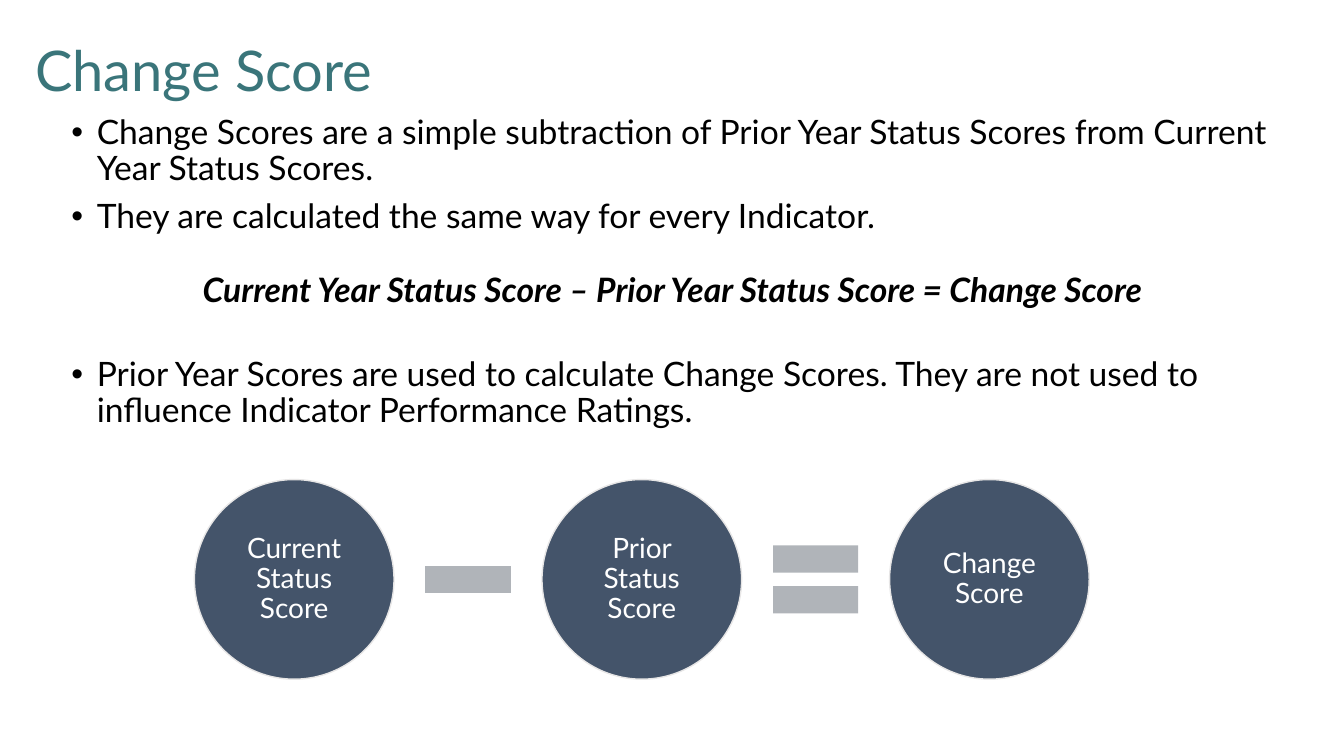
from dataclasses import dataclass

from lxml import etree
from pptx import Presentation
from pptx.dml.color import RGBColor
from pptx.enum.shapes import MSO_SHAPE
from pptx.enum.text import MSO_ANCHOR, PP_ALIGN
from pptx.oxml.ns import qn
from pptx.util import Cm, Pt

OVAL = MSO_SHAPE.OVAL
MINUS = MSO_SHAPE.MATH_MINUS
EQUAL = MSO_SHAPE.MATH_EQUAL
MIDDLE = MSO_ANCHOR.MIDDLE
LEFT = PP_ALIGN.LEFT
CENTER = PP_ALIGN.CENTER


@dataclass(frozen=True)
class Theme:
    font: str = "Lato"
    teal: RGBColor = RGBColor(0x3A, 0x75, 0x7A)
    black: RGBColor = RGBColor(0, 0, 0)
    white: RGBColor = RGBColor(255, 255, 255)
    navy: RGBColor = RGBColor(0x44, 0x54, 0x6A)
    rim: RGBColor = RGBColor(0xE7, 0xE6, 0xE6)
    gray: RGBColor = RGBColor(0xB0, 0xB4, 0xB9)
    title: Pt = Pt(40)
    body: Pt = Pt(24)
    label: Pt = Pt(20)


THEME = Theme()
INDENT = Cm(0.64)

# Text, is it the formula, points before it
POINTS = [
    ("Change Scores are a simple subtraction of Prior Year Status Scores "
     "from Current Year Status Scores.", False, 0),
    ("They are calculated the same way for every Indicator.", False, 8),
    ("Current Year Status Score – Prior Year Status Score = Change Score",
     True, 27),
    ("Prior Year Scores are used to calculate Change Scores. They are not "
     "used to influence Indicator Performance Ratings.", False, 34),
]

# Each score and the sign that follows it
SCORES = [
    ("Current Status Score", MINUS),
    ("Prior Status Score", EQUAL),
    ("Change Score", None),
]
DISC = 5.03
SIGN = 2.92
PITCH = 8.76
START = 4.9
MID = 14.6


def add_run(para, text, size, color, strong=False):
    run = para.add_run()
    run.text = text
    font = run.font
    font.name = THEME.font
    font.size = size
    font.color.rgb = color
    font.bold = font.italic = strong


def set_para(para, align=LEFT, before=0):
    para.alignment = align
    para.line_spacing = 0.9
    para.space_before = Pt(before)


def set_indent(para, bullet=False):
    """Indent the paragraph, hanging it from a bullet if asked."""
    props = para._p.get_or_add_pPr()
    props.set("marL", str(INDENT))
    props.set("indent", str(-INDENT if bullet else 0))
    if bullet:
        face = etree.SubElement(props, qn("a:buFont"))
        face.set("typeface", "Arial")
        mark = etree.SubElement(props, qn("a:buChar"))
        mark.set("char", "•")


def add_box(slide, left, top, width, height):
    box = slide.shapes.add_textbox(Cm(left), Cm(top), Cm(width), Cm(height))
    frame = box.text_frame
    frame.word_wrap = True
    return frame


def add_title(slide, text):
    frame = add_box(slide, 0, 0, 29.21, 3.68)
    frame.vertical_anchor = MIDDLE
    para = frame.paragraphs[0]
    set_indent(para)
    set_para(para)
    add_run(para, text, THEME.title, THEME.teal)


def add_points(slide, points):
    frame = add_box(slide, 1.55, 2.79, 30.78, 8.3)
    for num, (text, formula, before) in enumerate(points):
        para = frame.add_paragraph() if num else frame.paragraphs[0]
        if not formula:
            set_indent(para, bullet=True)
        set_para(para, CENTER if formula else LEFT, before)
        add_run(para, text, THEME.body, THEME.black, strong=formula)


def add_form(slide, kind, center, size, fill):
    """Add a square preset shape centred on the row of scores."""
    form = slide.shapes.add_shape(
        kind, Cm(center - size / 2), Cm(MID - size / 2), Cm(size), Cm(size))
    form.shadow.inherit = False
    form.fill.solid()
    form.fill.fore_color.rgb = fill
    form.line.fill.background()
    return form


def add_disc(slide, center, text):
    disc = add_form(slide, OVAL, center, DISC, THEME.navy)
    disc.line.color.rgb = THEME.rim
    disc.line.width = Pt(1)
    frame = disc.text_frame
    frame.word_wrap = True
    frame.vertical_anchor = MIDDLE
    frame.margin_left = frame.margin_right = Cm(0.08)
    frame.margin_top = frame.margin_bottom = Cm(0.08)
    para = frame.paragraphs[0]
    set_para(para, CENTER)
    add_run(para, text, THEME.label, THEME.white)


def add_scores(slide, scores):
    for num, (text, sign) in enumerate(scores):
        center = START + DISC / 2 + num * PITCH
        add_disc(slide, center, text)
        if sign:
            add_form(slide, sign, center + PITCH / 2, SIGN, THEME.gray)


def main():
    deck = Presentation()
    deck.slide_width = Cm(33.87)
    deck.slide_height = Cm(19.05)
    slide = deck.slides.add_slide(deck.slide_layouts[6])
    add_title(slide, "Change Score")
    add_points(slide, POINTS)
    add_scores(slide, SCORES)
    deck.save("out.pptx")


if __name__ == "__main__":
    main()
